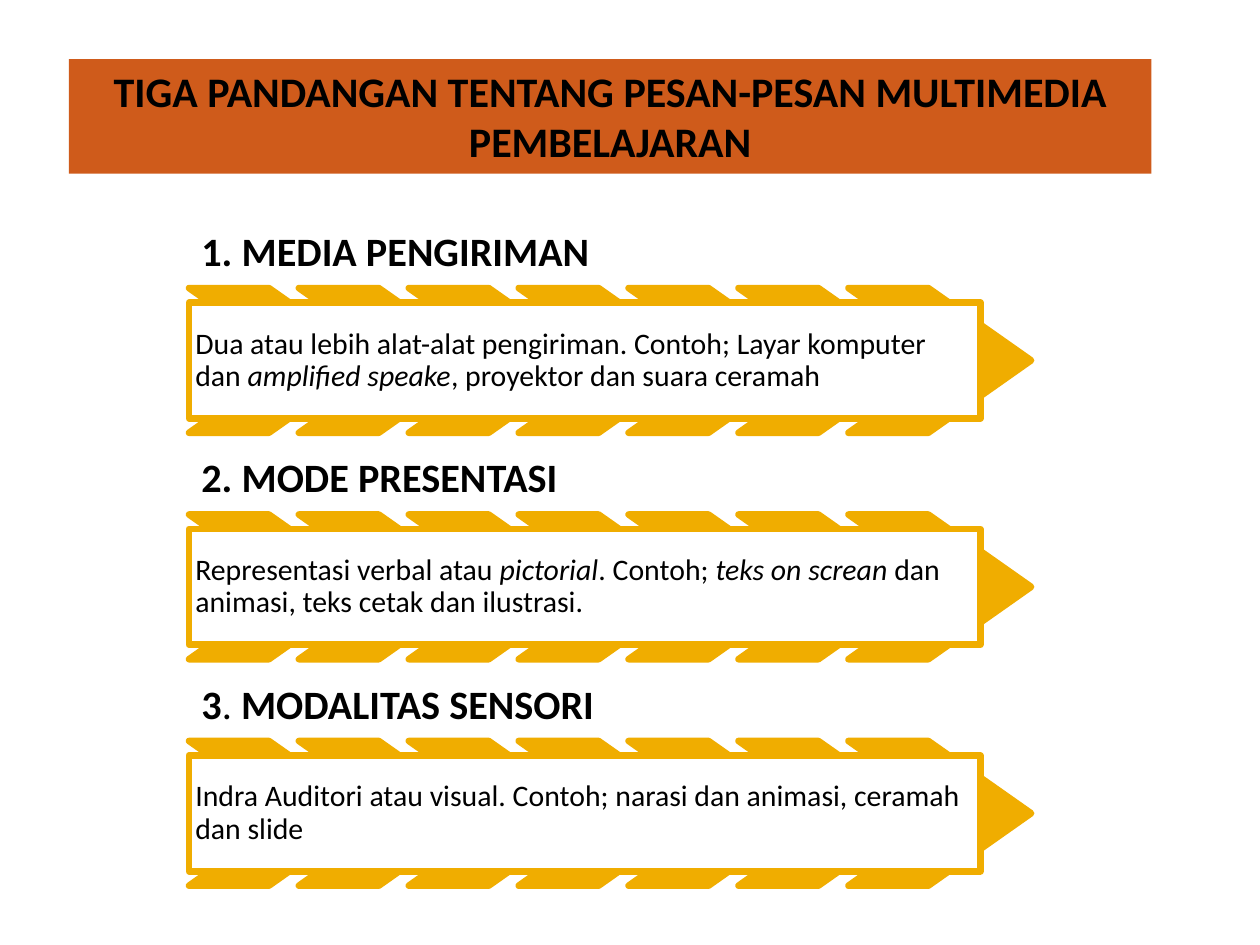
from lxml.etree import SubElement
from pptx import Presentation
from pptx.dml.color import RGBColor
from pptx.enum.shapes import MSO_SHAPE
from pptx.enum.text import MSO_ANCHOR, MSO_AUTO_SIZE, PP_ALIGN
from pptx.oxml.ns import qn
from pptx.util import Pt

COLORS = {"banner": "CF5B1B", "gold": "F0AD00", "panel": "FFFFFF", "text": "000000"}
TITLE = {"size": Pt(24), "bold": True}
HEADING = {"size": Pt(23), "bold": True}
BODY = {"size": Pt(17), "bold": False}

# Each view: heading runs, then body runs; a run is its text and changed formats
VIEWS = [
    ([("1. MEDIA PENGIRIMAN", {})],
     [("Dua atau lebih alat-alat pengiriman. Contoh; Layar komputer dan ", {}),
      ("amplified speake", {"italic": True}),
      (", proyektor dan suara ceramah", {})]),
    ([("2. MODE PRESENTASI", {})],
     [("Representasi verbal atau ", {}),
      ("pictorial", {"italic": True}),
      (". Contoh; ", {}),
      ("teks on screan ", {"italic": True}),
      ("dan animasi, teks cetak dan ilustrasi.", {})]),
    ([("3", {}), (". ", {"bold": False}), ("MODALITAS SENSORI", {})],
     [("Indra Auditori atau visual. Contoh; narasi dan animasi, ceramah dan slide", {})]),
]

LEFT = 108
FIRST_TOP = 123.9
VIEW_STEP = 129.4
CHEVRON_STEP = 62.8
CHEVRON_COUNT = 7


def add_block(parent, preset, box, fill, outline=None):
    block = parent.add_shape(preset, *[Pt(length) for length in box])
    block.shadow.inherit = False
    block.fill.solid()
    block.fill.fore_color.rgb = RGBColor.from_string(COLORS[fill])
    if outline:
        block.line.color.rgb = RGBColor.from_string(COLORS[outline])
        block.line.width = Pt(3.78)
        SubElement(block.line._ln, qn("a:round"))
    else:
        block.line.fill.background()
    return block


def write(holder, runs, formats, align, anchor, inset, spacing):
    frame = holder.text_frame
    frame.word_wrap = True
    frame.vertical_anchor = anchor
    for side, margin in zip(("left", "top", "right", "bottom"), inset):
        setattr(frame, f"margin_{side}", Pt(margin))
    paragraph = frame.paragraphs[0]
    paragraph.alignment = align
    paragraph.line_spacing = spacing
    for words, changes in runs:
        run = paragraph.add_run()
        run.text = words
        run.font.name = "Calibri"
        run.font.color.rgb = RGBColor.from_string(COLORS["text"])
        for attribute, value in {**formats, **changes}.items():
            setattr(run.font, attribute, value)


presentation = Presentation()
presentation.slide_width = Pt(720)
presentation.slide_height = Pt(540)
slide = presentation.slides.add_slide(presentation.slide_layouts[6])

# Title banner
banner = add_block(slide.shapes, MSO_SHAPE.RECTANGLE, (39.4, 33.8, 618.6, 65.4), "banner")
write(banner, [("TIGA PANDANGAN TENTANG PESAN-PESAN MULTIMEDIA PEMBELAJARAN", {})],
      TITLE, PP_ALIGN.CENTER, MSO_ANCHOR.TOP, (7.2, 3.6, 7.2, 3.6), 1.0)
banner.text_frame.auto_size = MSO_AUTO_SIZE.SHAPE_TO_FIT_TEXT

# Three views: heading, chevron arrow and text panel
views = slide.shapes.add_group_shape().shapes
for index, (heading_runs, body_runs) in enumerate(VIEWS):
    top = FIRST_TOP + index * VIEW_STEP
    heading = views.add_textbox(Pt(LEFT), Pt(top), Pt(446.4), Pt(40.6))
    write(heading, heading_runs, HEADING, PP_ALIGN.LEFT, MSO_ANCHOR.BOTTOM, [7.2] * 4, 0.9)

    for position in range(CHEVRON_COUNT):
        box = (LEFT + position * CHEVRON_STEP, top + 40.7, 104.4, 82.7)
        chevron = add_block(views, MSO_SHAPE.CHEVRON, box, "gold", "gold")
        chevron.adjustments[0] = 0.71

    panel = add_block(views, MSO_SHAPE.RECTANGLE, (LEFT, top + 49, 452.2, 66.2),
                      "panel", "gold")
    write(panel, body_runs, BODY, PP_ALIGN.LEFT, MSO_ANCHOR.MIDDLE, [3.6] * 4, 0.9)

presentation.save("out.pptx")
